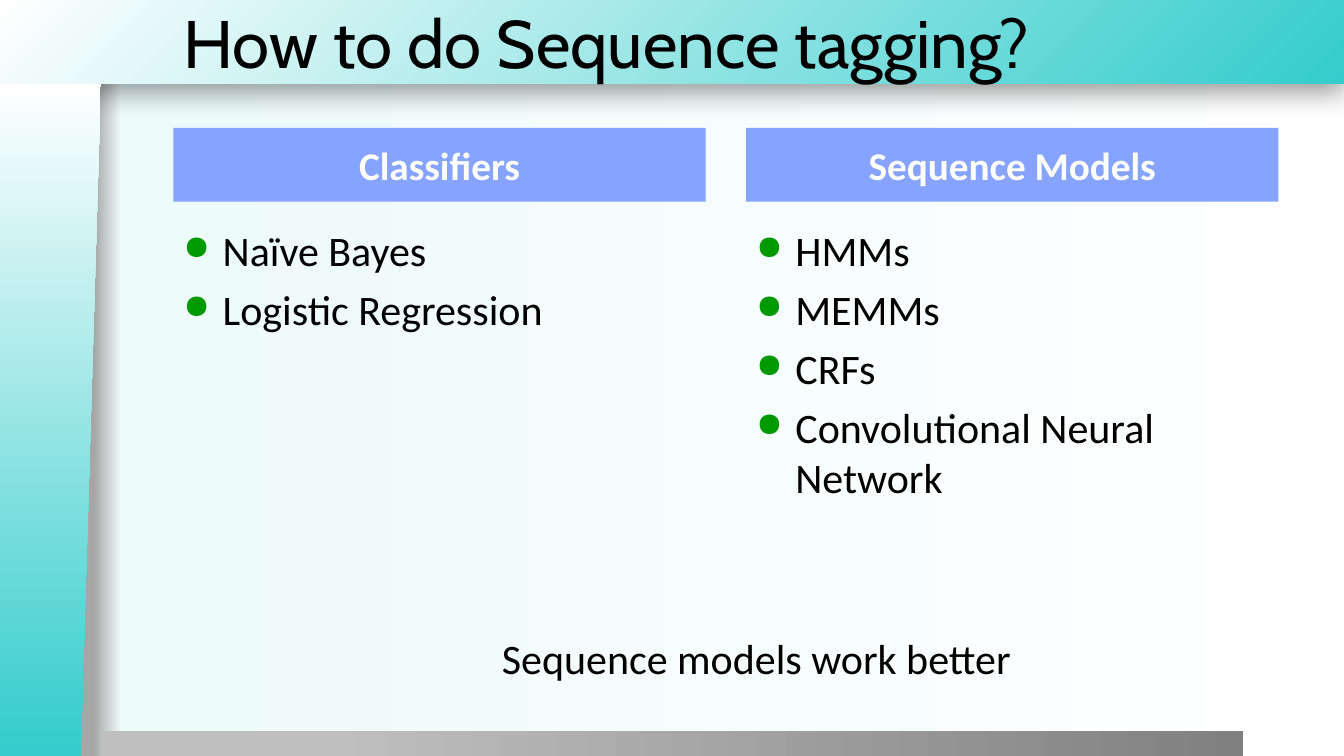
from dataclasses import dataclass

from lxml.etree import SubElement
from pptx import Presentation
from pptx.dml.color import RGBColor
from pptx.enum.shapes import MSO_SHAPE as Shape
from pptx.enum.text import MSO_ANCHOR as Anchor, MSO_AUTO_SIZE as AutoSize, PP_ALIGN as Align
from pptx.oxml.ns import qn
from pptx.util import Emu, Pt

PX = 9144  # 100 px to the inch
COLORS = {
    "teal": "34CCCC", "mint": "EDFBFB", "white": "FFFFFF", "black": "000000",
    "edge": "A6A6A6", "silver": "BFBFBF", "grey": "808080",
    "header": "85A3FF", "bullet": "009900",
}


@dataclass
class Box:
    left: int
    top: int
    width: int
    height: int

    def emu(self) -> tuple:
        return tuple(Emu(v * PX) for v in (self.left, self.top, self.width, self.height))


@dataclass
class Gradient:
    stops: list  # (percent, colour name)
    radial: bool = False


@dataclass
class Panel:
    shape: Shape
    box: Box
    gradient: Gradient
    rotation: int = 0
    flip: bool = False
    shadow: bool = False


@dataclass
class Style:
    size: int
    color: str = "black"
    font: str = "Calibri"
    bold: bool = False


@dataclass
class Column:
    left: int
    header: str
    items: list


BACKDROP = Gradient([(7, "edge"), (9, "mint"), (100, "white")])
PANELS = [
    Panel(Shape.RECTANGLE, Box(-1, 0, 1334, 83),
          Gradient([(0, "teal"), (100, "white")], radial=True), shadow=True),
    Panel(Shape.RECTANGLE, Box(100, 725, 1133, 26), Gradient([(20, "silver"), (100, "grey")])),
    Panel(Shape.FLOWCHART_MANUAL_INPUT, Box(-284, 367, 668, 100),
          Gradient([(1, "teal"), (100, "white")]), rotation=270, flip=True),
]
COLUMNS = [
    Column(172, "Classifiers", ["Naïve Bayes", "Logistic Regression"]),
    Column(740, "Sequence Models", ["HMMs", "MEMMs", "CRFs", "Convolutional Neural Network"]),
]
COLUMN_WIDTH = 528
TITLE = Style(48, font="Cabin")
HEADER = Style(28, "white", bold=True)
BODY = Style(30)


def add_xml(parent, tag: str, **attrs):
    return SubElement(parent, qn(tag), {k: str(v) for k, v in attrs.items()})


def add_color(parent, name: str):
    return add_xml(parent, "a:srgbClr", val=COLORS[name])


def paint_gradient(fill, owner, gradient: Gradient) -> None:
    fill.gradient()
    grad = next(owner.iter(qn("a:gradFill")))
    for child in list(grad):
        grad.remove(child)
    grad.set("rotWithShape", "1")
    stops = add_xml(grad, "a:gsLst")
    for percent, color in gradient.stops:
        add_color(add_xml(stops, "a:gs", pos=percent * 1000), color)
    if gradient.radial:  # spreads from the bottom right corner
        path = add_xml(grad, "a:path", path="circle")
        add_xml(path, "a:fillToRect", l=100000, t=100000)
    else:
        add_xml(grad, "a:lin", ang=0, scaled=0)


def add_panel(slide, panel: Panel) -> None:
    sp = slide.shapes.add_shape(panel.shape, *panel.box.emu())
    paint_gradient(sp.fill, sp.element, panel.gradient)
    sp.line.fill.background()
    sp.shadow.inherit = False
    sp.rotation = panel.rotation
    if panel.flip:
        sp.element.spPr.find(qn("a:xfrm")).set("flipV", "1")
    if panel.shadow:
        effects = sp.element.spPr.find(qn("a:effectLst"))
        outer = add_xml(effects, "a:outerShdw", blurRad=Pt(20), dist=Pt(6),
                        dir=5400000, algn="t", rotWithShape=0)
        add_xml(add_color(outer, "black"), "a:alpha", val=40000)


def add_text(slide, box: Box, lines: list, style: Style, anchor=Anchor.TOP, align=Align.LEFT):
    sp = slide.shapes.add_textbox(*box.emu())
    tf = sp.text_frame
    tf.word_wrap = True
    tf.vertical_anchor = anchor
    for i, line in enumerate(lines):
        p = tf.add_paragraph() if i else tf.paragraphs[0]
        p.text = line
        p.alignment = align
        font = p.runs[0].font
        font.name, font.size, font.bold = style.font, Pt(style.size), style.bold
        font.color.rgb = RGBColor.from_string(COLORS[style.color])
    return sp


def set_spacing(p):
    pPr = p._p.get_or_add_pPr()
    add_xml(add_xml(pPr, "a:spcBef"), "a:spcPct", val=20000)
    return pPr


def set_bullet(p) -> None:
    pPr = set_spacing(p)
    pPr.set("marL", str(39 * PX))
    pPr.set("indent", str(-39 * PX))
    add_color(add_xml(pPr, "a:buClr"), "bullet")
    add_xml(pPr, "a:buSzPct", val=80000)
    add_xml(pPr, "a:buChar", char="●")


def add_column(slide, column: Column) -> None:
    header = add_text(slide, Box(column.left, 127, COLUMN_WIDTH, 73), [column.header],
                      HEADER, Anchor.MIDDLE, Align.CENTER)
    header.fill.solid()
    header.fill.fore_color.rgb = RGBColor.from_string(COLORS["header"])
    set_spacing(header.text_frame.paragraphs[0])
    body = add_text(slide, Box(column.left, 218, COLUMN_WIDTH, 366), column.items, BODY)
    for p in body.text_frame.paragraphs:
        set_bullet(p)


def main() -> None:
    prs = Presentation()
    prs.slide_width, prs.slide_height = Emu(1333 * PX), Emu(750 * PX)
    slide = prs.slides.add_slide(prs.slide_layouts[6])

    # Backdrop and frame
    paint_gradient(slide.background.fill, slide.element, BACKDROP)
    for panel in PANELS:
        add_panel(slide, panel)

    # Title and the two lists
    add_text(slide, Box(172, 0, 1162, 83), ["How to do Sequence tagging?"], TITLE, Anchor.MIDDLE)
    for column in COLUMNS:
        add_column(slide, column)

    # Conclusion
    note = add_text(slide, Box(488, 623, 531, 61), ["Sequence models work better"], BODY)
    note.text_frame.word_wrap = False
    note.text_frame.auto_size = AutoSize.SHAPE_TO_FIT_TEXT

    prs.save("out.pptx")


if __name__ == "__main__":
    main()
